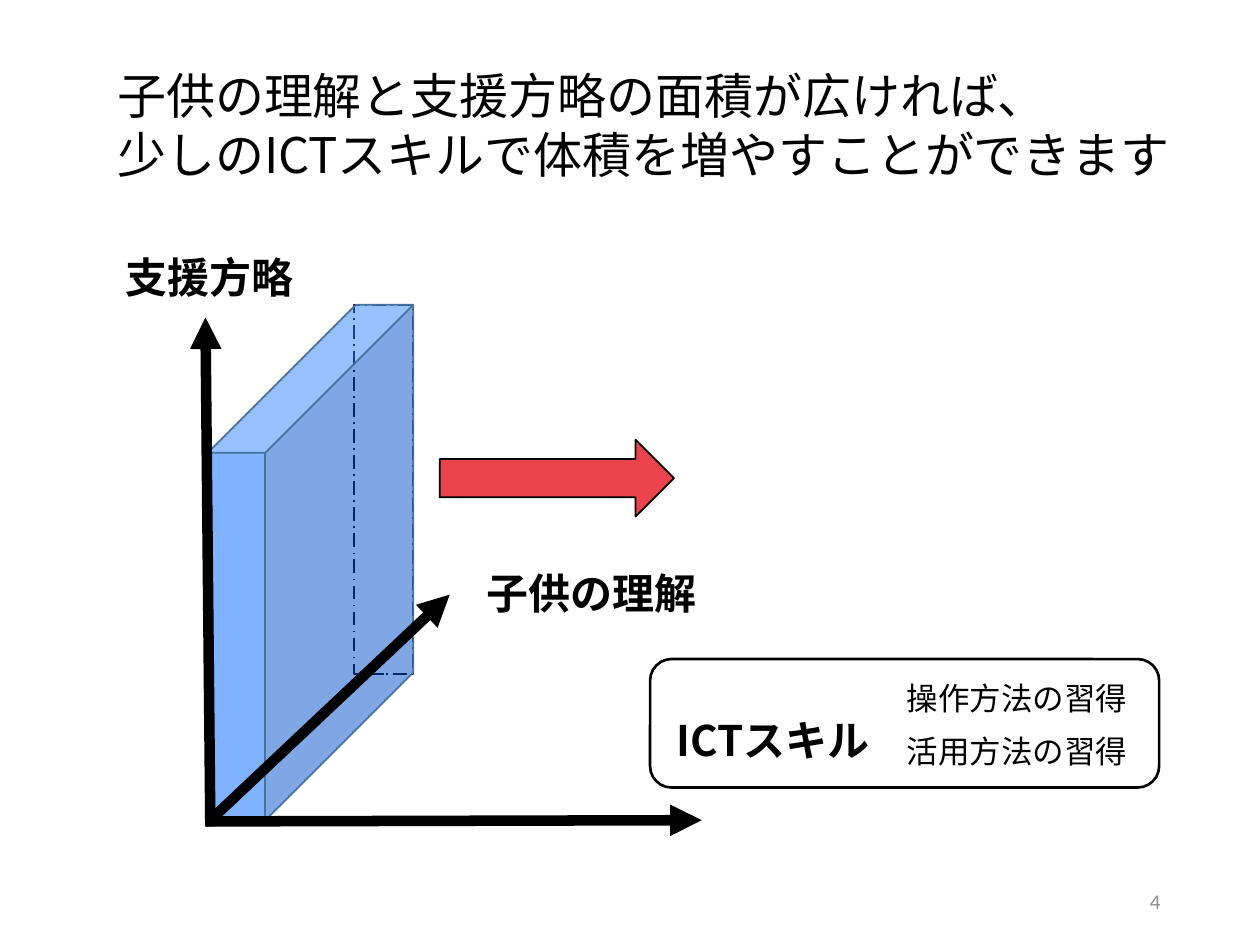
from dataclasses import dataclass
from typing import Optional

from lxml import etree
from pptx import Presentation
from pptx.dml.color import RGBColor
from pptx.enum.dml import MSO_LINE
from pptx.enum.shapes import MSO_CONNECTOR, MSO_SHAPE
from pptx.enum.text import MSO_ANCHOR, MSO_AUTO_SIZE, PP_ALIGN
from pptx.oxml.ns import qn
from pptx.util import Pt

RECT, CUBE = MSO_SHAPE.RECTANGLE, MSO_SHAPE.CUBE
ARROW, ROUND = MSO_SHAPE.RIGHT_ARROW, MSO_SHAPE.ROUNDED_RECTANGLE
STRAIGHT = MSO_CONNECTOR.STRAIGHT
DASH = MSO_LINE.LONG_DASH_DOT
LEFT, RIGHT = PP_ALIGN.LEFT, PP_ALIGN.RIGHT
TOP, MIDDLE = MSO_ANCHOR.TOP, MSO_ANCHOR.MIDDLE
FIXED = MSO_AUTO_SIZE.NONE


@dataclass(frozen=True)
class Theme:
    ink: str = "000000"
    blue: str = "0066FF"
    edge: str = "43739E"
    red: str = "EC444C"
    gray: str = "8C8C8C"
    font: str = "Noto Sans CJK JP"
    latin: str = "Calibri"
    title: int = 28
    label: int = 24
    note: int = 18
    page: int = 12
    leading: float = 1.2


@dataclass(frozen=True)
class Box:
    left: float
    top: float
    width: float
    height: float

    def place(self) -> tuple:
        return Pt(self.left), Pt(self.top), Pt(self.width), Pt(self.height)


@dataclass(frozen=True)
class Label:
    text: str
    box: Box
    size: int
    bold: bool = False
    color: str = "000000"
    font: str = "Noto Sans CJK JP"
    align: PP_ALIGN = LEFT
    anchor: MSO_ANCHOR = TOP


@dataclass(frozen=True)
class Solid:
    kind: MSO_SHAPE
    box: Box
    line: str
    weight: float = 1
    fill: Optional[str] = None
    alpha: int = 100
    adjust: Optional[float] = None
    dash: Optional[MSO_LINE] = None


@dataclass(frozen=True)
class Axis:
    start: tuple[float, float]
    end: tuple[float, float]


THEME = Theme()
TITLE = Label(
    "子供の理解と支援方略の面積が広ければ、\n少しのICTスキルで体積を増やすことができます",
    Box(59.8, 34, 612, 112), THEME.title)
SOLIDS = [
    Solid(RECT, Box(202.3, 174.2, 33.8, 211), THEME.ink, dash=DASH),
    Solid(CUBE, Box(118.8, 174.2, 117.4, 294.5), THEME.edge,
          fill=THEME.blue, alpha=50, adjust=0.72),
]
AXES = [
    Axis((120.2, 472.3), (117.4, 181.4)),
    Axis((118, 469.4), (401, 468.7)),
    Axis((120.2, 468.7), (257, 339.8)),
]
FRONT = [
    Solid(ARROW, Box(251.3, 251.3, 133.9, 43.9), THEME.ink, fill=THEME.red),
    Solid(ROUND, Box(371.5, 376.6, 290.9, 73.4), THEME.ink, weight=1.5),
]
LABELS = [
    Label("子供の理解", Box(270.7, 320.6, 135.4, 36), THEME.label, True),
    Label("支援方略", Box(64.8, 140, 111.6, 36), THEME.label, True),
    Label("ICTスキル", Box(379.4, 405, 131.8, 36), THEME.label, True),
    Label("操作方法の習得", Box(511.2, 384.5, 141.8, 29), THEME.note),
    Label("活用方法の習得", Box(511.2, 415, 141.8, 29), THEME.note),
    Label("4", Box(508.3, 500.4, 162, 28.8), THEME.page, color=THEME.gray,
          font=THEME.latin, align=RIGHT, anchor=MIDDLE),
]


def write(shape, label: Label) -> None:
    frame = shape.text_frame
    frame.text = label.text
    frame.word_wrap = True
    frame.auto_size = FIXED
    frame.vertical_anchor = label.anchor
    if label.align == LEFT:
        frame.margin_right = 0
    for para in frame.paragraphs:
        para.alignment = label.align
        para.line_spacing = Pt(label.size * THEME.leading)
        font = para.font
        font.size, font.bold, font.name = Pt(label.size), label.bold, label.font
        font.color.rgb = RGBColor.from_string(label.color)
        props = para._p.pPr.find(qn("a:defRPr"))
        etree.SubElement(props, qn("a:ea"), typeface=label.font)


def add_title(slide, label: Label) -> None:
    shape = slide.shapes.title
    shape.left, shape.top, shape.width, shape.height = label.box.place()
    write(shape, label)


def add_solid(slide, item: Solid) -> None:
    shape = slide.shapes.add_shape(item.kind, *item.box.place())
    shape.shadow.inherit = False
    if item.adjust is not None:
        shape.adjustments[0] = item.adjust
    if item.fill:
        shape.fill.solid()
        shape.fill.fore_color.rgb = RGBColor.from_string(item.fill)
        if item.alpha < 100:
            tint = shape._element.spPr.find(qn("a:solidFill"))[0]
            etree.SubElement(tint, qn("a:alpha"), val=str(item.alpha * 1000))
    else:
        shape.fill.background()
    shape.line.color.rgb = RGBColor.from_string(item.line)
    shape.line.width = Pt(item.weight)
    if item.dash:
        shape.line.dash_style = item.dash


def add_axis(slide, axis: Axis) -> None:
    ends = [Pt(value) for value in axis.start + axis.end]
    link = slide.shapes.add_connector(STRAIGHT, *ends)
    link.line.color.rgb = RGBColor.from_string(THEME.ink)
    link.line.width = Pt(6)
    props = link._element.spPr
    etree.SubElement(props.find(qn("a:ln")), qn("a:tailEnd"), type="triangle")
    etree.SubElement(props, qn("a:effectLst"))


def main() -> None:
    deck = Presentation()
    deck.slide_width, deck.slide_height = Pt(720), Pt(540)
    slide = deck.slides.add_slide(deck.slide_layouts[5])
    add_title(slide, TITLE)
    for item in SOLIDS:
        add_solid(slide, item)
    for axis in AXES:
        add_axis(slide, axis)
    for item in FRONT:
        add_solid(slide, item)
    for label in LABELS:
        write(slide.shapes.add_textbox(*label.box.place()), label)
    deck.save("out.pptx")


if __name__ == "__main__":
    main()
